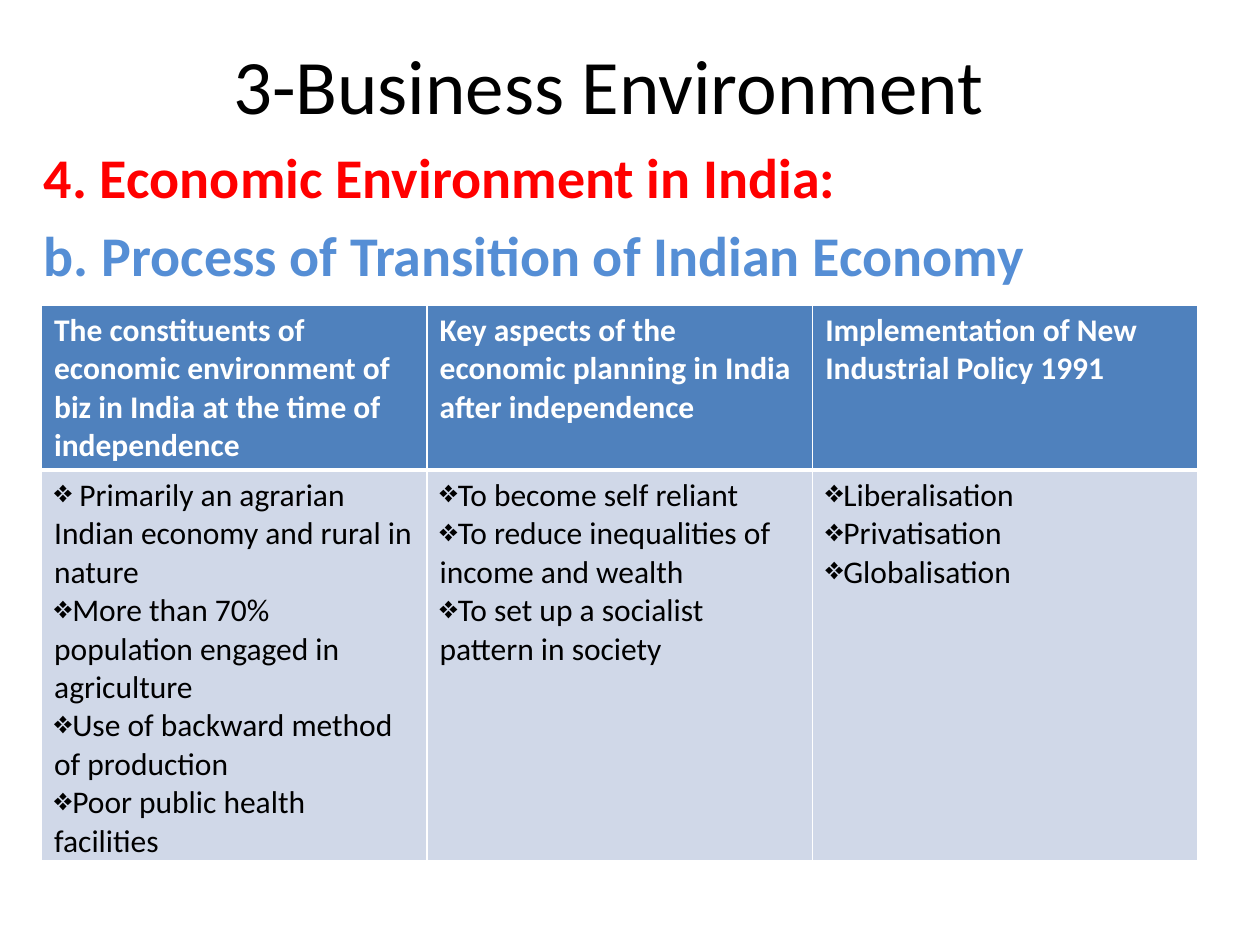
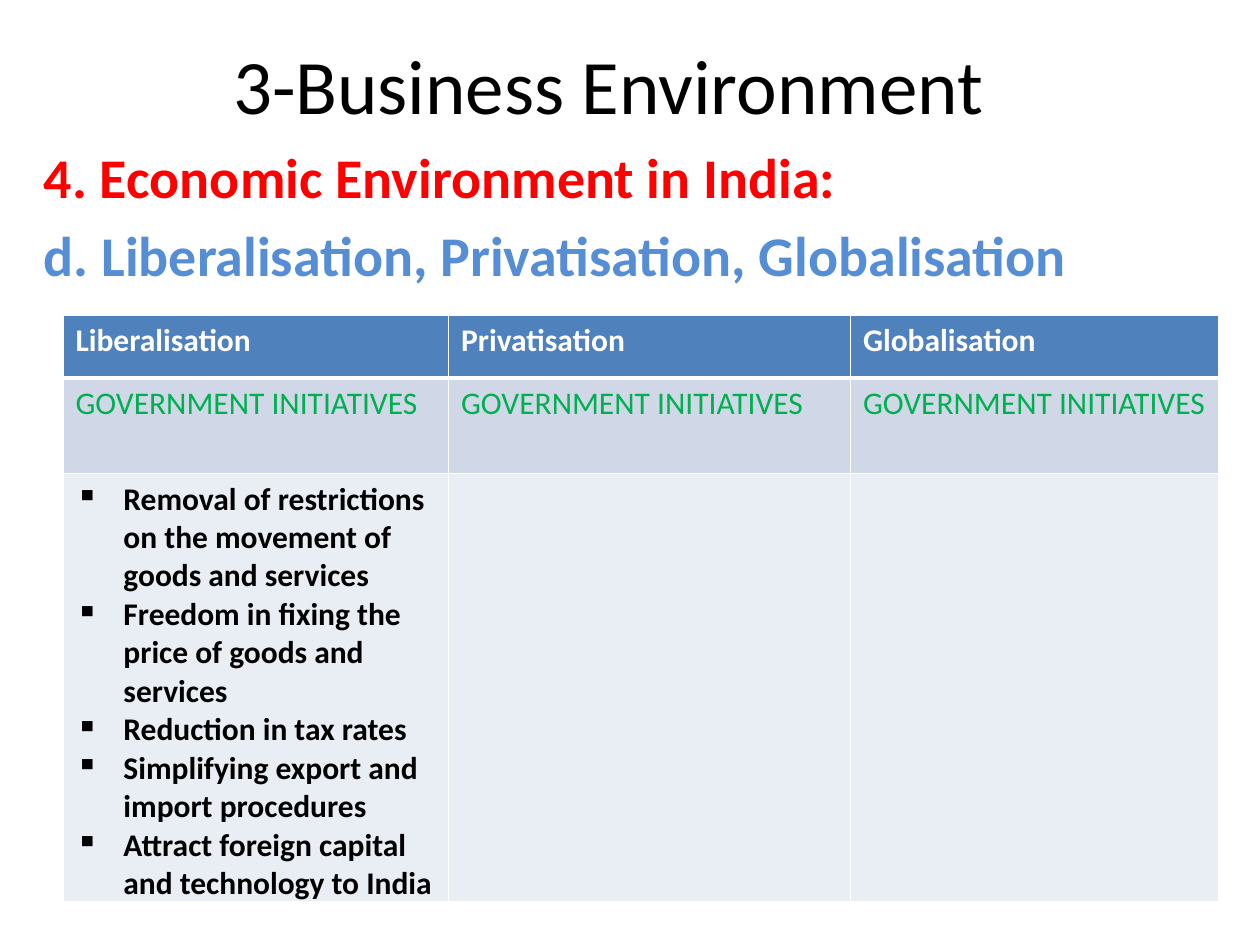
from lxml import etree
from pptx import Presentation
from pptx.dml.color import RGBColor
from pptx.enum.text import MSO_ANCHOR, PP_ALIGN
from pptx.oxml.ns import qn
from pptx.util import Inches, Pt

MIDDLE = MSO_ANCHOR.MIDDLE
CENTER = PP_ALIGN.CENTER
TITLE_ONLY = 5

FONT = "Calibri"
BLACK, WHITE, RED, GREEN = "000000", "FFFFFF", "FF0000", "00B050"
HEADING_BLUE, HEADER_FILL = "558ED5", "4F81BD"
BAND_DARK, BAND_LIGHT = "D0D8E8", "E9EDF4"

TITLE = "3-Business Environment"
SECTION = "4. Economic Environment in India:"

HEADER_STYLE = {"fill": HEADER_FILL, "color": WHITE, "bold": True, "bottom": 3}
DIAMOND_STYLE = {"fill": BAND_DARK, "color": BLACK, "bullet": "❖"}
INITIATIVE_STYLE = {"fill": BAND_DARK, "color": GREEN}
SQUARE_STYLE = {"fill": BAND_LIGHT, "color": BLACK, "bold": True,
                "bullet": "▪", "indent": 0.38}

SLIDES = [
    {
        "topic": "b. Process of Transition of Indian Economy",
        "position": (0.33, 2.42),
        "columns": [3.06, 3.06, 3.06],
        "rows": [
            (1.31, HEADER_STYLE, [
                ["The constituents of economic environment of biz in India "
                 "at the time of independence"],
                ["Key aspects of the economic planning in India after independence"],
                ["Implementation of New Industrial Policy 1991"],
            ]),
            (3.09, DIAMOND_STYLE, [
                [" Primarily an agrarian Indian economy and rural in nature",
                 "More than 70% population engaged in agriculture",
                 "Use of backward method of production",
                 "Poor public health facilities"],
                ["To become self reliant",
                 "To reduce inequalities of income and wealth",
                 "To set up a socialist pattern in society"],
                ["Liberalisation", "Privatisation", "Globalisation"],
            ]),
        ],
    },
    {
        "topic": "d. Liberalisation, Privatisation, Globalisation",
        "position": (0.5, 2.5),
        "columns": [3.06, 3.19, 2.92],
        "rows": [
            (0.5, HEADER_STYLE,
             [["Liberalisation"], ["Privatisation"], ["Globalisation"]]),
            (0.76, INITIATIVE_STYLE, [["GOVERNMENT INITIATIVES"]] * 3),
            (3.4, SQUARE_STYLE, [
                ["Removal of restrictions on the movement of goods and services",
                 "Freedom in fixing the price of goods and services",
                 "Reduction in tax rates",
                 "Simplifying export and import procedures",
                 "Attract foreign capital and technology to India"],
                [],
                [],
            ]),
        ],
    },
]


def rgb(value):
    return RGBColor.from_string(value)


def style_paragraph(paragraph, size, color, bold=False):
    font = paragraph.font
    font.name, font.size, font.bold = FONT, Pt(size), bold
    font.color.rgb = rgb(color)


def write_lines(text_frame, lines):
    for index, line in enumerate(lines):
        paragraph = text_frame.add_paragraph() if index else text_frame.paragraphs[0]
        paragraph.text = line
        yield paragraph


def set_indent(paragraph, indent):
    properties = paragraph._p.get_or_add_pPr()
    properties.set("marL", str(Inches(indent)))
    properties.set("indent", str(-Inches(indent)))
    return properties


def add_bullet(paragraph, character, indent):
    properties = set_indent(paragraph, indent)
    bullet = etree.Element(qn("a:buChar"), char=character)
    properties.insert_element_before(bullet, "a:tabLst", "a:defRPr", "a:extLst")


def add_borders(cell, bottom):
    properties = cell._tc.get_or_add_tcPr()
    for side, width in (("lnL", 1), ("lnR", 1), ("lnT", 1), ("lnB", bottom)):
        line = etree.SubElement(properties, qn(f"a:{side}"), w=str(Pt(width)))
        fill = etree.SubElement(line, qn("a:solidFill"))
        etree.SubElement(fill, qn("a:srgbClr"), val=WHITE)


def fill_cell(cell, lines, style):
    add_borders(cell, style.get("bottom", 1))
    cell.fill.solid()
    cell.fill.fore_color.rgb = rgb(style["fill"])
    for paragraph in write_lines(cell.text_frame, lines):
        style_paragraph(paragraph, 18, style["color"], style.get("bold", False))
        if "bullet" in style:
            add_bullet(paragraph, style["bullet"], style.get("indent", 0))


def add_title(slide):
    title = slide.shapes.title
    title.left, title.top = Inches(0.58), Inches(0.25)
    title.width, title.height = Inches(8.5), Inches(0.83)
    title.text_frame.text = TITLE
    title.text_frame.vertical_anchor = MIDDLE
    paragraph = title.text_frame.paragraphs[0]
    paragraph.alignment = CENTER
    style_paragraph(paragraph, 44, BLACK)


def add_headings(slide, topic):
    box = slide.shapes.add_textbox(Inches(0.25), Inches(1.08), Inches(9.42), Inches(5.83))
    box.text_frame.word_wrap = True
    paragraphs = write_lines(box.text_frame, [SECTION, topic])
    for paragraph, color in zip(paragraphs, (RED, HEADING_BLUE)):
        style_paragraph(paragraph, 32, color, True)
        paragraph.space_before = Pt(6.4)
        set_indent(paragraph, 0.56)


def add_content_table(slide, position, columns, rows):
    left, top = position
    height = sum(row[0] for row in rows)
    table = slide.shapes.add_table(
        len(rows), len(columns), Inches(left), Inches(top),
        Inches(sum(columns)), Inches(height)).table
    for column, width in zip(table.columns, columns):
        column.width = Inches(width)
    for row, (row_height, style, cells) in zip(table.rows, rows):
        row.height = Inches(row_height)
        for cell, lines in zip(row.cells, cells):
            fill_cell(cell, lines, style)


def main():
    presentation = Presentation()
    presentation.slide_width, presentation.slide_height = Inches(10), Inches(7.5)
    for content in SLIDES:
        slide = presentation.slides.add_slide(presentation.slide_layouts[TITLE_ONLY])
        add_title(slide)
        add_headings(slide, content["topic"])
        add_content_table(slide, content["position"], content["columns"], content["rows"])
    presentation.save("out.pptx")


if __name__ == "__main__":
    main()
